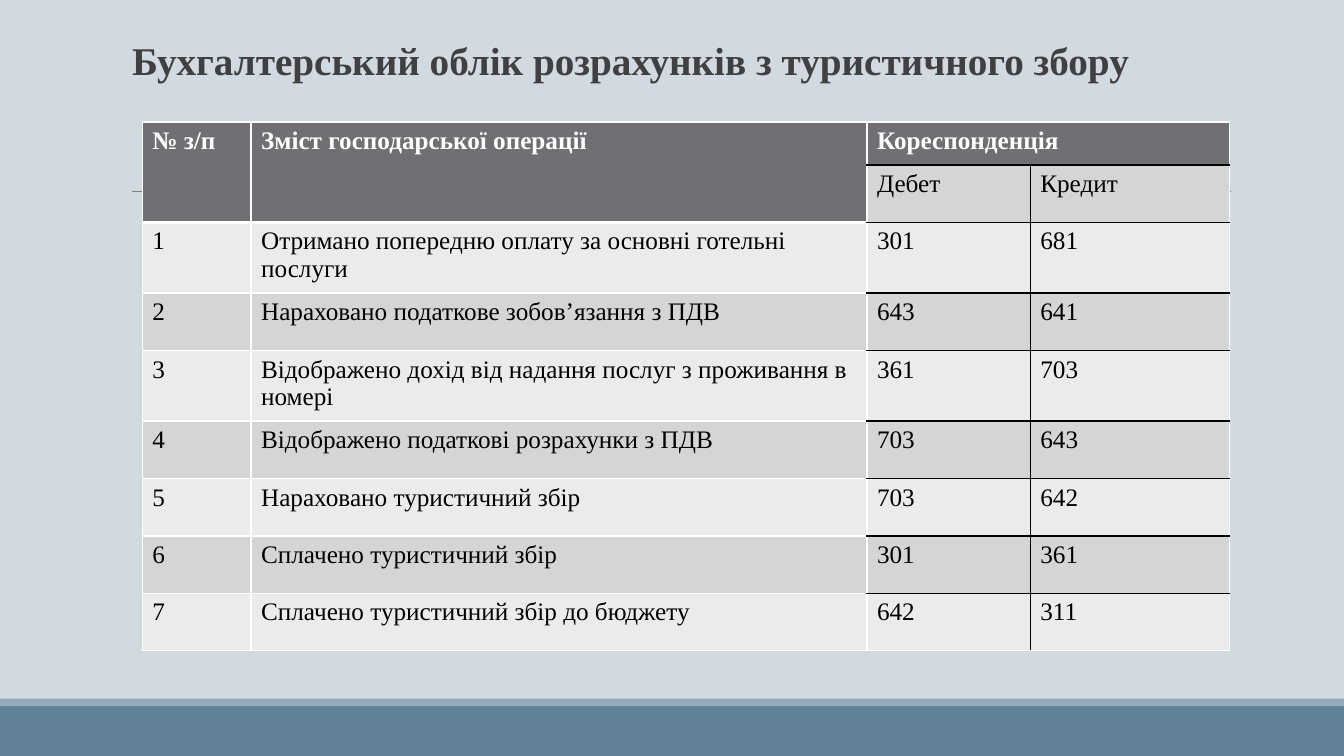
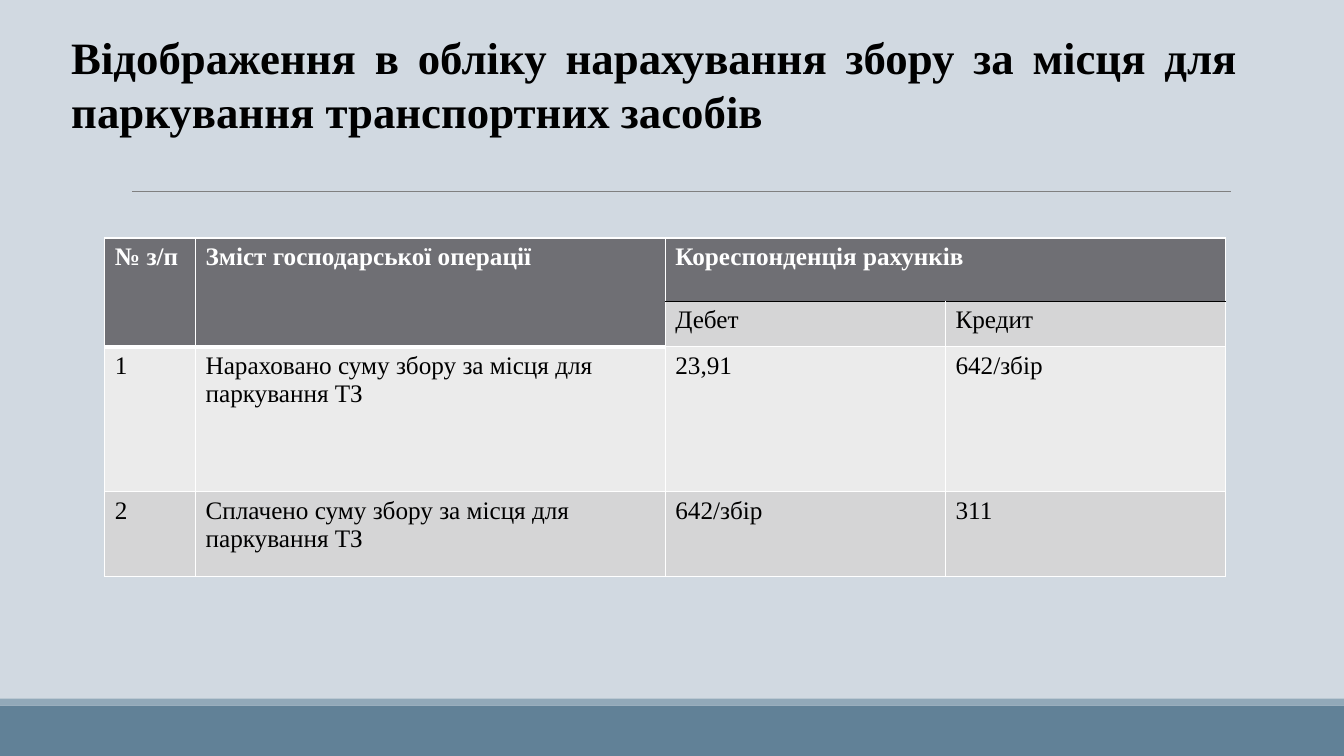
from lxml import etree
from pptx import Presentation
from pptx.dml.color import RGBColor
from pptx.enum.shapes import MSO_CONNECTOR, MSO_SHAPE
from pptx.enum.text import PP_ALIGN
from pptx.oxml.ns import qn
from pptx.util import Inches, Pt

RECTANGLE = MSO_SHAPE.RECTANGLE
STRAIGHT = MSO_CONNECTOR.STRAIGHT
LEFT, JUSTIFY = PP_ALIGN.LEFT, PP_ALIGN.JUSTIFY

FONT = "Times New Roman"
SLIDE_WIDTH, SLIDE_HEIGHT = Inches(40 / 3), Inches(7.5)
BLANK_LAYOUT = 6
HEADER_ROWS = 2
FIRST_ACCOUNT_COLUMN = 2

COLORS = {
    "background": "D1D9E1",
    "band": "618197",
    "band_edge": "92A9B9",
    "rule": "808080",
    "title": "404040",
    "header": "6F6F74",
    "row_dark": "D5D5D6",
    "row_light": "EBEBEB",
    "black": "000000",
    "white": "FFFFFF",
}

TOURIST_ROWS = [
    ("1", "Отримано попередню оплату за основні готельні послуги", "301", "681"),
    ("2", "Нараховано податкове зобов’язання з ПДВ", "643", "641"),
    ("3", "Відображено дохід від надання послуг з проживання в номері", "361", "703"),
    ("4", "Відображено податкові розрахунки з ПДВ", "703", "643"),
    ("5", "Нараховано туристичний збір", "703", "642"),
    ("6", "Сплачено туристичний збір", "301", "361"),
    ("7", "Сплачено туристичний збір до бюджету", "642", "311"),
]
PARKING_ROWS = [
    ("1", "Нараховано суму збору за місця для паркування ТЗ", "23,91", "642/збір"),
    ("2", "Сплачено суму збору за місця для паркування ТЗ", "642/збір", "311"),
]


def rgb(name):
    return RGBColor.from_string(COLORS[name])


# Lengths are percentages of the slide's width and height
def across(percent):
    return int(SLIDE_WIDTH * percent / 100)


def down(percent):
    return int(SLIDE_HEIGHT * percent / 100)


def format_runs(paragraph, size, color, bold):
    for run in paragraph.runs:
        run.font.name = FONT
        run.font.size = Pt(size)
        run.font.bold = bold
        run.font.color.rgb = rgb(color)


# Shared frame: bottom band with its edge, and the rule below the title
def add_band(slide, top, bottom, color):
    shape = slide.shapes.add_shape(
        RECTANGLE, 0, down(top), SLIDE_WIDTH, down(bottom - top))
    shape.shadow.inherit = False
    shape.fill.solid()
    shape.fill.fore_color.rgb = rgb(color)
    shape.line.fill.background()


def add_rule(slide):
    rule = slide.shapes.add_connector(
        STRAIGHT, across(9.83), down(25.3), across(91.57), down(25.3))
    rule.line.color.rgb = rgb("rule")
    rule.line.width = Pt(0.5)
    etree.SubElement(rule._element.spPr, qn("a:effectLst"))


def add_framed_slide(presentation):
    slide = presentation.slides.add_slide(presentation.slide_layouts[BLANK_LAYOUT])
    add_band(slide, 93.33, 100, "band")
    add_band(slide, 92.4, 93.33, "band_edge")
    add_rule(slide)
    return slide


def add_title(slide, text, left, top, width, height, size, color,
              alignment=LEFT, line_spacing=1.0):
    box = slide.shapes.add_textbox(
        across(left), down(top), across(width), down(height))
    text_frame = box.text_frame
    text_frame.word_wrap = True
    text_frame.margin_left = text_frame.margin_right = 0
    text_frame.text = text
    paragraph = text_frame.paragraphs[0]
    paragraph.alignment = alignment
    paragraph.line_spacing = line_spacing
    format_runs(paragraph, size, color, True)


# Table of operations and their accounts
def add_border(cell, side, color, width):
    border = etree.SubElement(
        cell._tc.get_or_add_tcPr(), qn("a:ln" + side), w=str(Pt(width)))
    fill = etree.SubElement(border, qn("a:solidFill"))
    etree.SubElement(fill, qn("a:srgbClr"), val=COLORS[color])


def horizontal_border(line, column, row_count, dark_grid):
    if column < FIRST_ACCOUNT_COLUMN:
        return "white", 3 if 0 < line <= HEADER_ROWS else 1
    is_dark = line == 1 or (dark_grid and 1 < line < row_count)
    return "black" if is_dark else "white", 1


def vertical_border(line, row, dark_grid):
    is_dark = dark_grid and row > 0 and line == FIRST_ACCOUNT_COLUMN + 1
    return "black" if is_dark else "white", 1


def format_cell(cell, row, column, row_count, dark_grid):
    add_border(cell, "L", *vertical_border(column, row, dark_grid))
    add_border(cell, "R", *vertical_border(column + 1, row, dark_grid))
    add_border(cell, "T", *horizontal_border(row, column, row_count, dark_grid))
    add_border(cell, "B", *horizontal_border(row + 1, column, row_count, dark_grid))
    is_header = row == 0 or (row < HEADER_ROWS and column < FIRST_ACCOUNT_COLUMN)
    cell.fill.solid()
    cell.fill.fore_color.rgb = rgb(
        "header" if is_header else "row_dark" if row % 2 else "row_light")
    format_runs(cell.text_frame.paragraphs[0], 18,
                "white" if is_header else "black", is_header)


def add_account_table(slide, left, top, widths, heights, accounts_heading,
                      operations, dark_grid=False):
    rows = [
        ("№ з/п", "Зміст господарської операції", accounts_heading, ""),
        ("", "", "Дебет", "Кредит"),
        *operations,
    ]
    table = slide.shapes.add_table(
        len(rows), len(widths), across(left), down(top),
        across(sum(widths)), down(sum(heights))).table
    table.first_row = table.horz_banding = False
    for column, width in zip(table.columns, widths):
        column.width = across(width)
    for row, height in zip(table.rows, heights):
        row.height = down(height)
    for row_index, values in enumerate(rows):
        for column_index, value in enumerate(values):
            cell = table.cell(row_index, column_index)
            cell.text_frame.text = value
            format_cell(cell, row_index, column_index, len(rows), dark_grid)
    # Header cells that span rows or columns
    for column_index in range(FIRST_ACCOUNT_COLUMN):
        table.cell(0, column_index).merge(table.cell(1, column_index))
    table.cell(0, 2).merge(table.cell(0, 3))


def main():
    presentation = Presentation()
    presentation.slide_width = SLIDE_WIDTH
    presentation.slide_height = SLIDE_HEIGHT
    background = presentation.slide_master.background.fill
    background.solid()
    background.fore_color.rgb = rgb("background")

    # Tourist tax
    slide = add_framed_slide(presentation)
    add_title(slide, "Бухгалтерський облік розрахунків з туристичного збору",
              9.83, 4.8, 81.7, 8, 28, "title", line_spacing=0.9)
    add_account_table(slide, 10.58, 16.13, [8.1, 45.83, 12.15, 14.85],
                      [5.7] + [7.6] * (len(TOURIST_ROWS) + 1),
                      "Кореспонденція", TOURIST_ROWS, dark_grid=True)

    # Parking fee
    slide = add_framed_slide(presentation)
    add_title(slide, "Відображення в обліку нарахування збору за місця для "
              "паркування транспортних засобів",
              5.3, 3.33, 86.8, 15.7, 32, "black", alignment=JUSTIFY)
    add_account_table(slide, 7.8, 31.47, [6.75, 34.95, 20.85, 20.85],
                      [8.4, 6, 19.2, 11.2],
                      "Кореспонденція рахунків", PARKING_ROWS)

    presentation.save("out.pptx")


if __name__ == "__main__":
    main()
